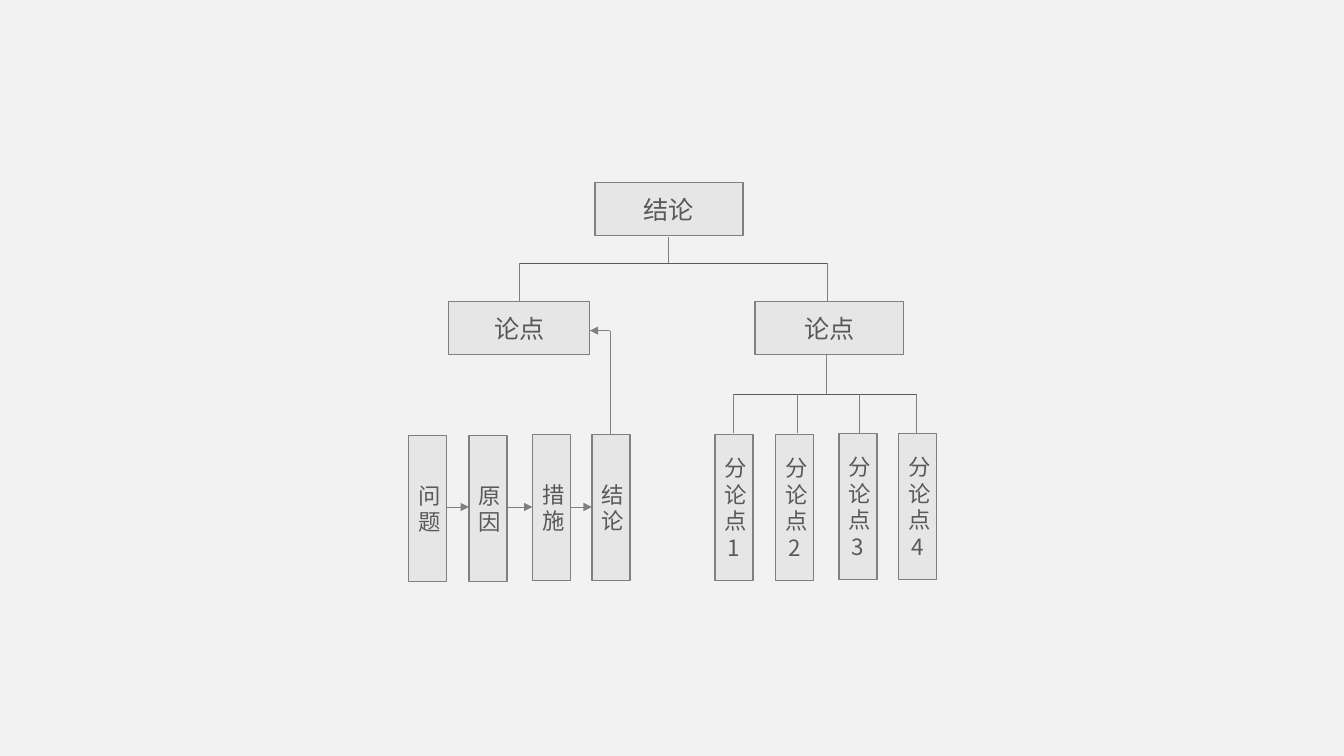
from dataclasses import dataclass
from itertools import pairwise

from lxml.etree import SubElement
from pptx import Presentation
from pptx.dml.color import RGBColor
from pptx.enum.shapes import MSO_CONNECTOR, MSO_SHAPE
from pptx.enum.text import MSO_ANCHOR, PP_ALIGN
from pptx.oxml.ns import qn
from pptx.util import Pt

EMU_PER_PX = 9144
COLUMN_STEPS = [(0, 0), (60, 0), (123, -1), (182, -1)]
COLUMN_WIDTH, COLUMN_HEIGHT = 38, 145


@dataclass(frozen=True)
class Theme:
    background: RGBColor = RGBColor(0xF2, 0xF2, 0xF2)
    fill: RGBColor = RGBColor(0xE7, 0xE6, 0xE6)
    outline: RGBColor = RGBColor(0x80, 0x80, 0x80)
    dark: RGBColor = RGBColor(0x59, 0x59, 0x59)
    font: str = "Noto Sans CJK SC"
    heading_size: int = 18
    column_size: int = 16


THEME = Theme()


def px(length):
    return length * EMU_PER_PX


def add_box(page, label, left, top, width, height, size):
    box = page.shapes.add_shape(
        MSO_SHAPE.RECTANGLE, px(left), px(top), px(width), px(height)
    )
    box.shadow.inherit = False
    box.fill.solid()
    box.fill.fore_color.rgb = THEME.fill
    box.line.color.rgb = THEME.outline
    box.line.width = Pt(1)
    frame = box.text_frame
    frame.word_wrap = True
    frame.vertical_anchor = MSO_ANCHOR.MIDDLE
    frame.text = label
    para = frame.paragraphs[0]
    para.alignment = PP_ALIGN.CENTER
    for span in para.runs:
        span.font.name = THEME.font
        span.font.size = Pt(size)
        span.font.color.rgb = THEME.dark
        east_asian = SubElement(span.font._element, qn("a:ea"))
        east_asian.set("typeface", THEME.font)


def add_line(page, start, end, color=THEME.outline, arrow=False):
    line = page.shapes.add_connector(
        MSO_CONNECTOR.STRAIGHT, *(px(value) for value in (*start, *end))
    )
    line.line.color.rgb = color
    line.line.width = Pt(0.5)
    if arrow:
        SubElement(line.line._get_or_add_ln(), qn("a:tailEnd")).set("type", "triangle")
    SubElement(line._element.spPr, qn("a:effectLst"))


def add_branches(page, stem_x, top, rail_y, bottom, drops):
    add_line(page, (stem_x, top), (stem_x, rail_y))
    add_line(page, (drops[0], rail_y), (drops[-1], rail_y), THEME.dark)
    for drop_x in drops:
        add_line(page, (drop_x, rail_y), (drop_x, bottom))


def add_columns(page, labels, left, top):
    for label, (step_x, step_y) in zip(labels, COLUMN_STEPS):
        add_box(
            page, label, left + step_x, top + step_y,
            COLUMN_WIDTH, COLUMN_HEIGHT, THEME.column_size,
        )


def add_flow_arrows(page, left, middle):
    for (before, _), (after, _) in pairwise(COLUMN_STEPS):
        start = (left + before + COLUMN_WIDTH, middle)
        add_line(page, start, (left + after, middle), arrow=True)


def main():
    deck = Presentation()
    deck.slide_width, deck.slide_height = px(1333), px(750)
    page = deck.slides.add_slide(deck.slide_layouts[6])
    page.background.fill.solid()
    page.background.fill.fore_color.rgb = THEME.background

    for label, left, top, width in [
        ("结论", 590, 181, 147),
        ("论点", 445, 299, 140),
        ("论点", 749, 299, 147),
    ]:
        add_box(page, label, left, top, width, 53, THEME.heading_size)

    add_columns(page, ["问题", "原因", "措施", "结论"], 405, 432)
    add_columns(page, [f"分论点{number}" for number in range(1, 5)], 709, 431)

    add_branches(page, 663, 235, 261, 299, [515, 821])
    add_branches(page, 820, 352, 391, 430, [727, 791, 852, 909])
    add_flow_arrows(page, 405, 503)
    add_line(page, (605, 431), (605, 328))
    add_line(page, (605, 328), (585, 328), arrow=True)

    deck.save("out.pptx")


if __name__ == "__main__":
    main()
